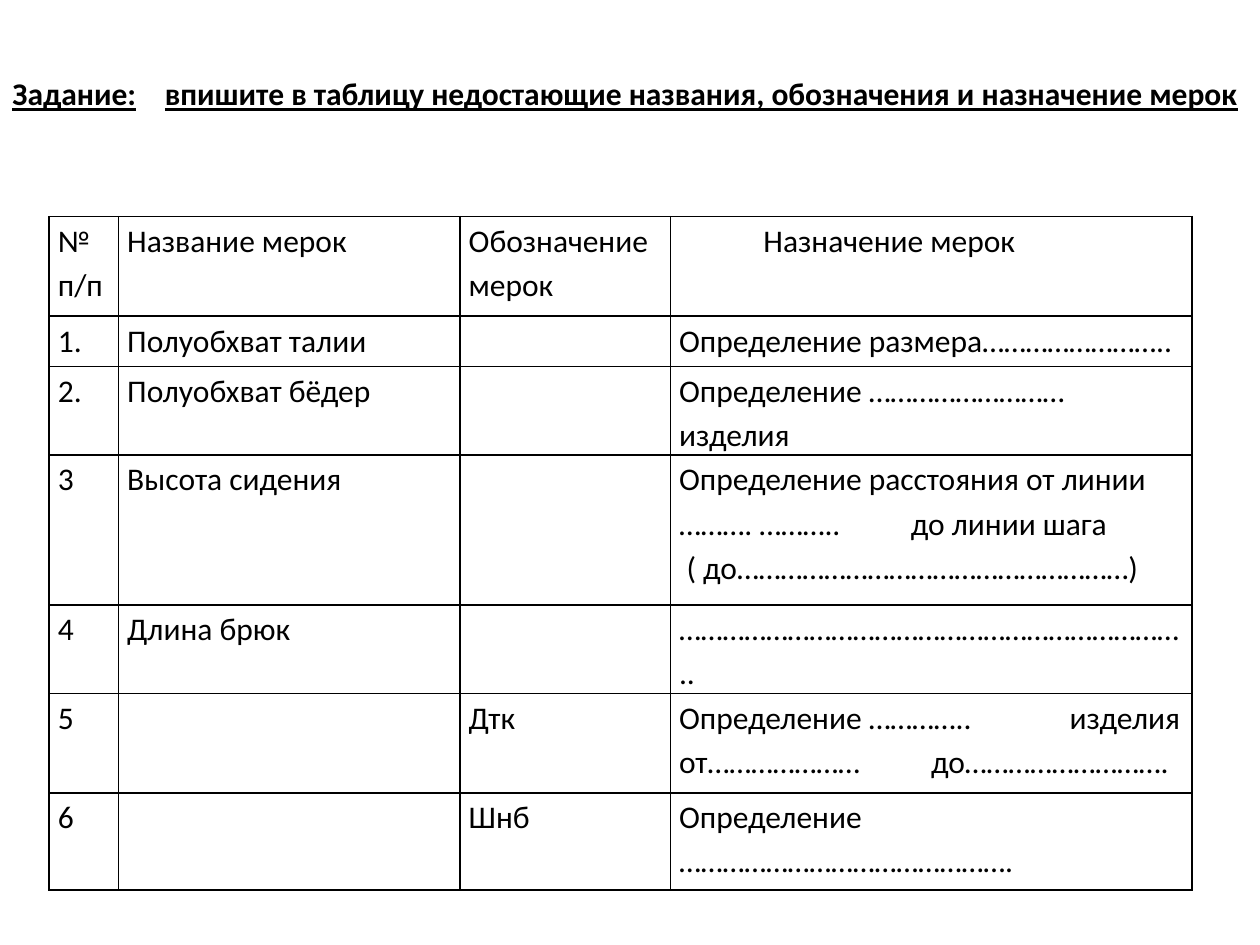
"""Build a worksheet slide with a table of body measurements to fill in."""
from dataclasses import dataclass

from lxml.etree import SubElement
from pptx import Presentation
from pptx.dml.color import RGBColor
from pptx.enum.text import MSO_ANCHOR as Anchor
from pptx.oxml import parse_xml
from pptx.oxml.ns import nsdecls, qn
from pptx.util import Inches, Pt


@dataclass(frozen=True)
class Theme:
    ink: str = "000000"
    font: str = "Calibri"
    text_size: int = 18
    border_width: float = 1
    line_spacing: float = 1.15
    cell_margin: float = 0.07


@dataclass(frozen=True)
class Line:
    text: str
    tabs: tuple = ()
    indent: float = 0


class SlideBuilder:
    def __init__(self, slide, theme):
        self.slide = slide
        self.theme = theme

    def fill_paragraph(self, paragraph, line):
        paragraph.text = line.text
        properties = paragraph._p.get_or_add_pPr()
        if line.indent:
            properties.set("marL", str(Inches(line.indent)))
        if line.tabs:
            tab_list = SubElement(properties, qn("a:tabLst"))
            for position in line.tabs:
                SubElement(tab_list, qn("a:tab"), pos=str(Inches(position)), algn="l")
        font = paragraph.font
        font.name = self.theme.font
        font.size = Pt(self.theme.text_size)
        font.color.rgb = RGBColor.from_string(self.theme.ink)

    def heading(self, line, left, top, width, height):
        shape = self.slide.shapes.add_textbox(*map(Inches, (left, top, width, height)))
        frame = shape.text_frame
        frame.word_wrap = True
        frame.vertical_anchor = Anchor.BOTTOM
        paragraph = frame.paragraphs[0]
        self.fill_paragraph(paragraph, line)
        paragraph.font.bold = True
        paragraph.font.underline = True

    def border(self, cell):
        properties = cell._tc.get_or_add_tcPr()
        for index, side in enumerate(("lnL", "lnR", "lnT", "lnB")):
            properties.insert(index, parse_xml(
                f'<a:{side} {nsdecls("a")} w="{Pt(self.theme.border_width)}"><a:solidFill>'
                f'<a:srgbClr val="{self.theme.ink}"/></a:solidFill></a:{side}>'))

    def cell(self, cell, content):
        cell.margin_left = cell.margin_right = Inches(self.theme.cell_margin)
        cell.margin_top = cell.margin_bottom = 0
        cell.fill.background()
        self.border(cell)
        lines = content if isinstance(content, list) else [content]
        frame = cell.text_frame
        for index, line in enumerate(lines):
            paragraph = frame.add_paragraph() if index else frame.paragraphs[0]
            paragraph.line_spacing = self.theme.line_spacing
            self.fill_paragraph(paragraph, line if isinstance(line, Line) else Line(line))

    def table(self, rows, left, top, widths, heights):
        frame = self.slide.shapes.add_table(
            len(rows), len(widths),
            *map(Inches, (left, top, sum(widths), sum(heights))))
        table = frame.table
        table.first_row = table.horz_banding = False
        for column, width in zip(table.columns, widths):
            column.width = Inches(width)
        for row, height, contents in zip(table.rows, heights, rows):
            row.height = Inches(height)
            for cell, content in zip(row.cells, contents):
                self.cell(cell, content)


TASK = Line("Задание:\tвпишите в таблицу недостающие названия, обозначения и назначение мерок", (1.21,))
MEASUREMENTS = [
    ("№ п/п", "Название мерок", "Обозначение мерок", Line("Назначение мерок", indent=0.67)),
    ("1.", "Полуобхват талии", "", "Определение размера…………………….."),
    ("2.", "Полуобхват бёдер", "", "Определение ………………………\vизделия"),
    ("3", "Высота сидения", "", [
        Line("Определение расстояния от линии ………. ………..\tдо линии шага", (1.84,)),
        Line("( до………………………………………………)", indent=0.06)]),
    ("4", "Длина брюк", "", "…………………………………………………………….."),
    ("5", "", "Дтк", Line(
        "Определение …………..\tизделия от…………………\tдо……………………….", (2, 3.1))),
    ("6", "", "Шнб", "Определение ………………………………………."),
]


def main():
    presentation = Presentation()
    presentation.slide_width, presentation.slide_height = Inches(10), Inches(7.5)
    slide = presentation.slides.add_slide(presentation.slide_layouts[6])
    builder = SlideBuilder(slide, Theme())
    builder.table(MEASUREMENTS, 0.39, 1.72, (0.55, 2.71, 1.67, 4.14),
                  (0.79, 0.4, 0.7, 1.19, 0.7, 0.79, 0.77))
    builder.heading(TASK, 0, 0, 10, 0.94)
    presentation.save("out.pptx")


if __name__ == "__main__":
    main()
